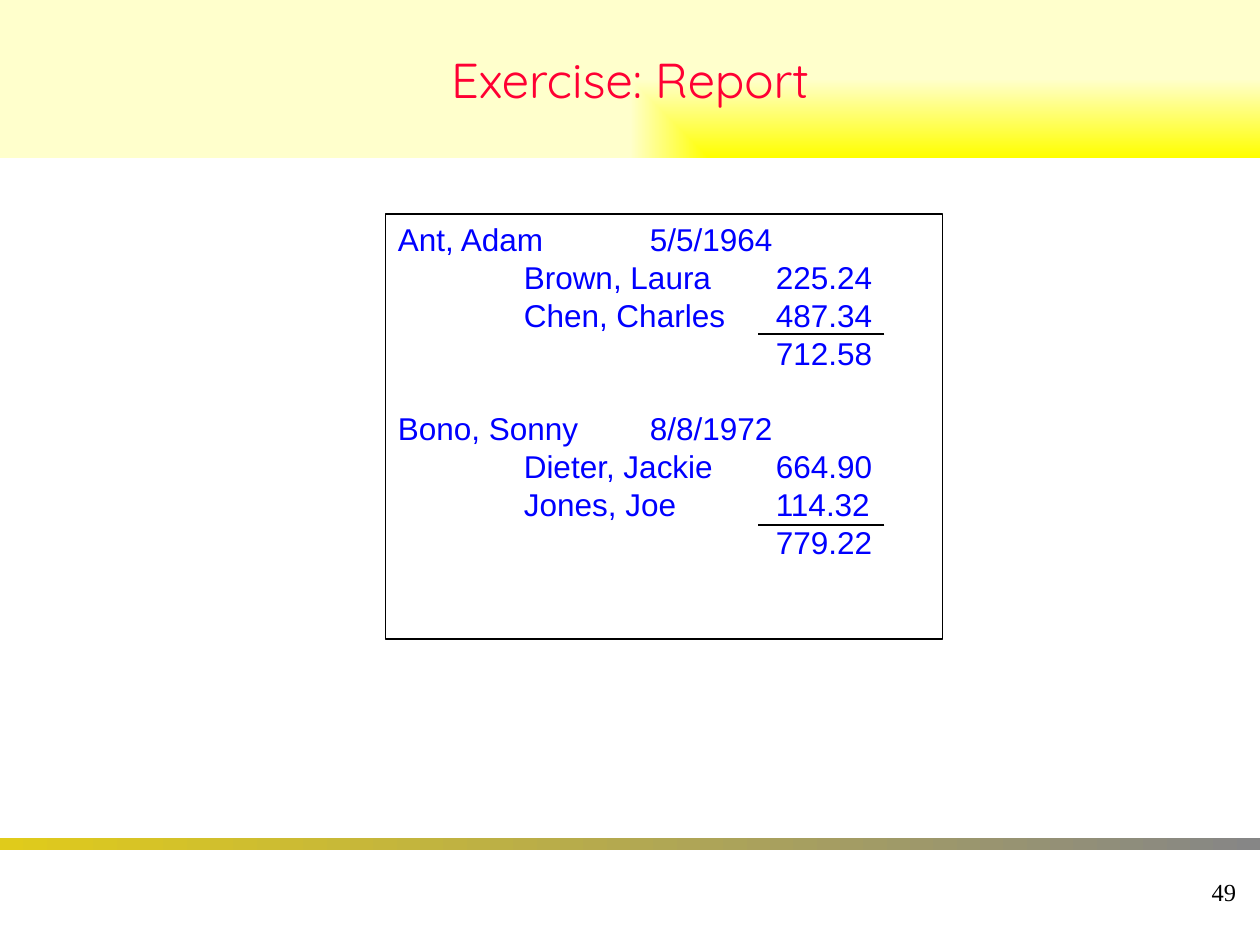
from dataclasses import dataclass

from lxml.etree import SubElement
from pptx import Presentation
from pptx.dml.color import RGBColor
from pptx.enum.shapes import MSO_CONNECTOR, MSO_SHAPE
from pptx.enum.text import MSO_ANCHOR, PP_ALIGN
from pptx.oxml.ns import qn
from pptx.util import Cm, Pt


@dataclass(frozen=True)
class Theme:
    title_color: RGBColor = RGBColor(0xFF, 0x00, 0x33)
    report_color: RGBColor = RGBColor(0x00, 0x00, 0xFF)
    black: RGBColor = RGBColor(0x00, 0x00, 0x00)
    white: RGBColor = RGBColor(0xFF, 0xFF, 0xFF)
    banner: tuple = (RGBColor(0xFF, 0xFF, 0x00), RGBColor(0xFF, 0xFF, 0xCC))
    footer: tuple = (RGBColor(0xE0, 0xCB, 0x1B), RGBColor(0x86, 0x86, 0x86))
    title_font: str = "Quicksand"
    report_font: str = "Arial"
    number_font: str = "Times New Roman"
    title_size: Pt = Pt(28)
    report_size: Pt = Pt(18)
    number_size: Pt = Pt(14)
    line_pitch: Pt = Pt(21.6)
    line_width: Pt = Pt(1)


THEME = Theme()

REPORT = [
    ("Ant, Adam\t5/5/1964", ["Brown, Laura\t225.24", "Chen, Charles\t487.34"], "712.58"),
    ("Bono, Sonny\t8/8/1972", ["Dieter, Jackie\t664.90", "Jones, Joe\t114.32"], "779.22"),
]


def add_text(paragraph, text, font, size, color):
    run = paragraph.add_run()
    run.text = text
    run.font.name = font
    run.font.size = size
    run.font.color.rgb = color


def fill_gradient(shape, colors):
    shape.fill.gradient()
    shape.fill.gradient_angle = 0
    for stop, color, position in zip(shape.fill.gradient_stops, colors, (0, 1)):
        stop.color.rgb = color
        stop.position = position


def radiate_from_corner(shape):
    gradient = shape.element.spPr.find(qn("a:gradFill"))
    gradient.remove(gradient.find(qn("a:lin")))
    path = SubElement(gradient, qn("a:path"), path="rect")
    SubElement(path, qn("a:fillToRect"), l="100000", t="100000")


def add_tab_stops(paragraph, step, count):
    tab_list = SubElement(paragraph._p.get_or_add_pPr(), qn("a:tabLst"))
    for index in range(1, count + 1):
        SubElement(tab_list, qn("a:tab"), pos=str(step * index), algn="l")


def add_rule(slide, left, top, width):
    rule = slide.shapes.add_connector(MSO_CONNECTOR.STRAIGHT, left + width, top, left, top)
    rule.line.color.rgb = THEME.black
    rule.line.width = THEME.line_width
    SubElement(rule.element.spPr, qn("a:effectLst"))


def add_title(slide, left, top, width, height):
    title = slide.shapes.title
    title.left, title.top, title.width, title.height = left, top, width, height
    fill_gradient(title, THEME.banner)
    radiate_from_corner(title)
    title.text_frame.vertical_anchor = MSO_ANCHOR.MIDDLE
    paragraph = title.text_frame.paragraphs[0]
    paragraph.alignment = PP_ALIGN.CENTER
    add_text(paragraph, "Exercise: Report", THEME.title_font, THEME.title_size, THEME.title_color)


def add_report(slide, left, top, width, height):
    box = slide.shapes.add_shape(MSO_SHAPE.RECTANGLE, left, top, width, height)
    box.shadow.inherit = False
    box.fill.solid()
    box.fill.fore_color.rgb = THEME.white
    box.line.color.rgb = THEME.black
    box.line.width = THEME.line_width
    frame = box.text_frame
    frame.word_wrap = False
    frame.vertical_anchor = MSO_ANCHOR.TOP
    column = Cm(2.54)
    group_height = Cm(3.86)
    for group, (heading, entries, total) in enumerate(REPORT):
        lines = [heading, *("\t" + entry for entry in entries), "\t\t\t" + total]
        for index, line in enumerate(lines):
            first = group == 0 and index == 0
            paragraph = frame.paragraphs[0] if first else frame.add_paragraph()
            paragraph.alignment = PP_ALIGN.LEFT
            paragraph.line_spacing = THEME.line_pitch
            if group and index == 0:
                paragraph.space_before = THEME.line_pitch
            add_tab_stops(paragraph, column, 3)
            add_text(paragraph, line, THEME.report_font, THEME.report_size, THEME.report_color)
        add_rule(slide, left + Cm(7.52), top + Cm(2.41) + group * group_height, column)


def add_footer(slide, left, top, width, height):
    bar = slide.shapes.add_shape(MSO_SHAPE.RECTANGLE, left, top, width, Cm(0.25))
    bar.shadow.inherit = False
    bar.line.fill.background()
    fill_gradient(bar, THEME.footer)
    number_width = Cm(5.28)
    number_top = Cm(0.46)
    number = slide.shapes.add_textbox(
        left + width - number_width - Cm(0.23), top + number_top, number_width, height - number_top
    )
    number.text_frame.word_wrap = True
    number.text_frame.vertical_anchor = MSO_ANCHOR.MIDDLE
    paragraph = number.text_frame.paragraphs[0]
    paragraph.alignment = PP_ALIGN.RIGHT
    add_text(paragraph, "49", THEME.number_font, THEME.number_size, THEME.black)


def main():
    presentation = Presentation()
    presentation.slide_width = Cm(25.4)
    presentation.slide_height = Cm(19.05)
    slide = presentation.slides.add_slide(presentation.slide_layouts[5])
    add_footer(slide, Cm(0), Cm(16.89), presentation.slide_width, Cm(1.73))
    add_title(slide, Cm(0), Cm(0), presentation.slide_width, Cm(3.18))
    add_report(slide, Cm(7.77), Cm(4.32), Cm(11.23), Cm(8.56))
    presentation.save("out.pptx")


if __name__ == "__main__":
    main()
